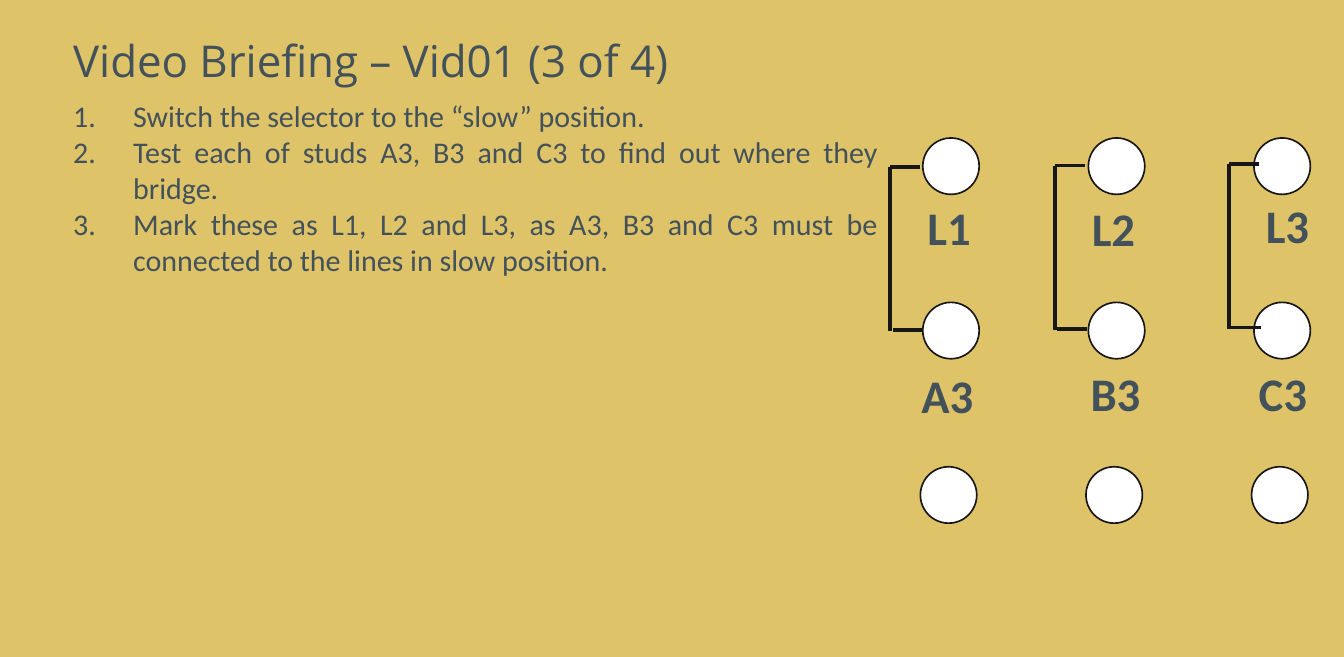
from dataclasses import dataclass

from lxml.etree import SubElement
from pptx import Presentation
from pptx.dml.color import RGBColor
from pptx.enum.shapes import MSO_CONNECTOR as Connector, MSO_SHAPE as Shape
from pptx.enum.text import MSO_ANCHOR as Anchor, MSO_AUTO_SIZE as AutoSize, PP_ALIGN as Align
from pptx.oxml.ns import qn
from pptx.util import Inches, Pt


@dataclass(frozen=True)
class Theme:
    background: RGBColor = RGBColor(0xDE, 0xC3, 0x68)
    text: RGBColor = RGBColor(0x43, 0x52, 0x5A)
    ink: RGBColor = RGBColor(0x18, 0x17, 0x17)
    stud: RGBColor = RGBColor(0xFF, 0xFF, 0xFF)
    title_font: str = "Open Sans"
    body_font: str = "Calibri"
    title_size: float = 26.3
    body_size: float = 18
    label_size: float = 28
    outline: float = 1
    wire: float = 2.25


def place(shape, left, top, width, height):
    shape.left, shape.top = Inches(left), Inches(top)
    shape.width, shape.height = Inches(width), Inches(height)


class SlideBuilder:
    def __init__(self, slide, theme):
        self.slide = slide
        self.theme = theme
        fill = slide.background.fill
        fill.solid()
        fill.fore_color.rgb = theme.background

    def style(self, paragraph, font_name, size, bold=False):
        for run in paragraph.runs:
            run.font.name = font_name
            run.font.size = Pt(size)
            run.font.bold = bold
            run.font.color.rgb = self.theme.text

    def title(self, text, *box):
        shape = self.slide.shapes.title
        place(shape, *box)
        frame = shape.text_frame
        frame.text = text
        frame.auto_size = AutoSize.NONE
        frame.vertical_anchor = Anchor.MIDDLE
        paragraph = frame.paragraphs[0]
        paragraph.alignment = Align.LEFT
        paragraph.line_spacing = 0.9
        self.style(paragraph, self.theme.title_font, self.theme.title_size)

    def numbered_list(self, items, *box):
        shape = self.slide.placeholders[1]
        place(shape, *box)
        frame = shape.text_frame
        frame.text = "\n".join(items)
        frame.auto_size = AutoSize.SHAPE_TO_FIT_TEXT
        for paragraph in frame.paragraphs:
            paragraph.alignment = Align.JUSTIFY
            paragraph.space_before = Pt(0)
            properties = paragraph._p.get_or_add_pPr()
            properties.set("marL", str(Inches(0.5)))
            properties.set("indent", str(Inches(-0.5)))
            SubElement(properties, qn("a:buFont"), typeface="+mj-lt")
            SubElement(properties, qn("a:buAutoNum"), type="arabicPeriod")
            self.style(paragraph, self.theme.body_font, self.theme.body_size)

    def stud(self, left, top, size=0.47):
        shape = self.slide.shapes.add_shape(
            Shape.OVAL, Inches(left), Inches(top), Inches(size), Inches(size))
        shape.shadow.inherit = False
        shape.fill.solid()
        shape.fill.fore_color.rgb = self.theme.stud
        shape.line.color.rgb = self.theme.ink
        shape.line.width = Pt(self.theme.outline)

    def label(self, text, left, top, width):
        shape = self.slide.shapes.add_textbox(
            Inches(left), Inches(top), Inches(width), Inches(0.57))
        frame = shape.text_frame
        frame.text = text
        frame.word_wrap = False
        frame.auto_size = AutoSize.SHAPE_TO_FIT_TEXT
        self.style(frame.paragraphs[0], self.theme.body_font, self.theme.label_size, bold=True)

    def line(self, x1, y1, x2, y2):
        connector = self.slide.shapes.add_connector(
            Connector.STRAIGHT, Inches(x1), Inches(y1), Inches(x2), Inches(y2))
        connector.line.color.rgb = self.theme.ink
        connector.line.width = Pt(self.theme.wire)
        SubElement(connector._element.spPr, qn("a:effectLst"))

    def bridge(self, left, top, arm=0.25):
        """Draw the bracket that joins a line stud to the stud below it."""
        self.line(left + 0.02 + arm, top + 1.36, left + 0.02, top + 1.36)
        self.line(left, top, left, top + 1.37)
        self.line(left + arm, top, left, top)


def main():
    presentation = Presentation()
    presentation.slide_width = Inches(11.2)
    presentation.slide_height = Inches(5.475)
    slide = presentation.slides.add_slide(presentation.slide_layouts[1])
    builder = SlideBuilder(slide, Theme())

    builder.title("Video Briefing – Vid01 (3 of 4)", 0.51, 0, 9.66, 1.06)
    builder.numbered_list([
        "Switch the selector to the “slow” position.",
        "Test each of studs A3, B3 and C3 to find out where they bridge.",
        "Mark these as L1, L2 and L3, as A3, B3 and C3 must be connected "
        "to the lines in slow position.",
    ], 0.51, 0.76, 6.91, 1.92)

    stud_pitch_x, stud_pitch_y = 1.38, 1.37
    for row, first_left in enumerate((7.69, 7.69, 7.67)):
        for column in range(3):
            builder.stud(first_left + column * stud_pitch_x, 1.15 + row * stud_pitch_y)

    for text, left, top, width in (
        ("A3", 7.58, 3.01, 0.64), ("B3", 8.99, 2.99, 0.62), ("C3", 10.39, 2.99, 0.61),
        ("L1", 7.63, 1.61, 0.57), ("L2", 9, 1.62, 0.57), ("L3", 10.45, 1.59, 0.57),
    ):
        builder.label(text, left, top, width)

    for left, top in ((7.42, 1.39), (8.79, 1.38), (10.24, 1.37)):
        builder.bridge(left, top)

    presentation.save("out.pptx")


if __name__ == "__main__":
    main()
